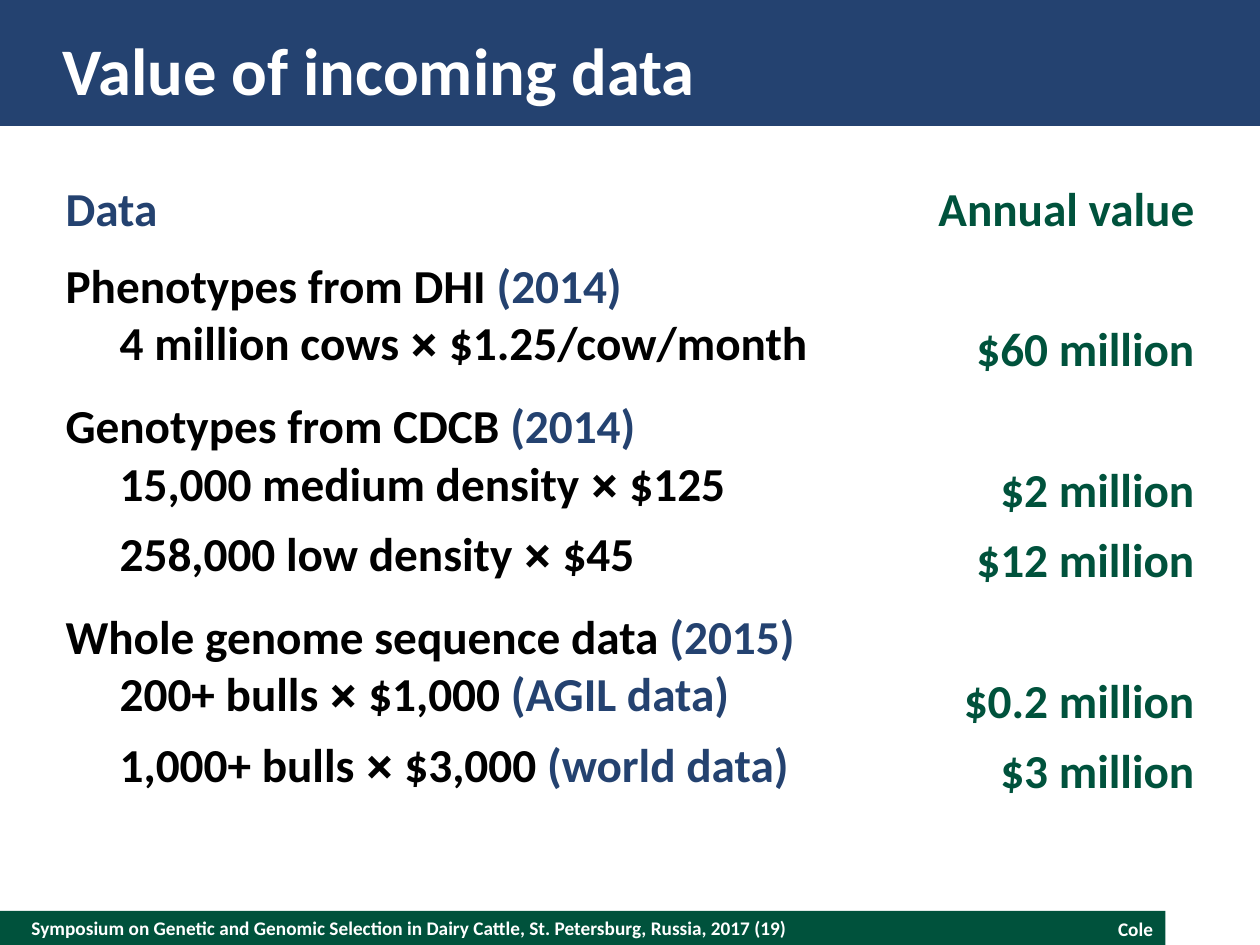
from lxml import etree
from pptx import Presentation
from pptx.dml.color import RGBColor
from pptx.enum.shapes import MSO_SHAPE
from pptx.enum.text import MSO_ANCHOR, PP_ALIGN
from pptx.oxml.ns import qn
from pptx.util import Inches, Pt

RECTANGLE = MSO_SHAPE.RECTANGLE
TOP, MIDDLE, BOTTOM = MSO_ANCHOR.TOP, MSO_ANCHOR.MIDDLE, MSO_ANCHOR.BOTTOM
LEFT, RIGHT = PP_ALIGN.LEFT, PP_ALIGN.RIGHT

COLORS = {"navy": "244270", "green": "00523C", "white": "FFFFFF", "black": "000000"}
FONT, SYMBOL_FONT = "Calibri", "DejaVu Sans Mono"
TITLE_SIZE, TABLE_SIZE, FOOTER_SIZE = 38, 27, 11
DETAIL_INDENT = 0.43
TABLE_HEIGHT = 5.02

# Kind of row, main text, note in navy, annual value
ROWS = [
    ("header", "", "Data", "Annual value"),
    ("group", "Phenotypes from DHI ", "(2014)", ""),
    ("detail", "4 million cows × $1.25/cow/month", "", "$60 million"),
    ("group", "Genotypes from CDCB ", "(2014)", ""),
    ("detail", "15,000 medium density × $125", "", "$2 million"),
    ("detail", "258,000 low density × $45", "", "$12 million"),
    ("group", "Whole genome sequence data ", "(2015)", ""),
    ("detail", "200+ bulls × $1,000", " (AGIL data)", "$0.2 million"),
    ("detail", "1,000+ bulls × $3,000", " (world data)", "$3 million"),
]


def color(name):
    return RGBColor.from_string(COLORS[name])


class Page:
    def __init__(self, deck):
        self.slide = deck.slides.add_slide(deck.slide_layouts[6])

    def bar(self, left, top, width, height, fill):
        shape = self.slide.shapes.add_shape(
            RECTANGLE, Inches(left), Inches(top), Inches(width), Inches(height))
        shape.shadow.inherit = False
        shape.fill.solid()
        shape.fill.fore_color.rgb = color(fill)
        shape.line.fill.background()

    def span(self, para, text, size, ink, font=FONT):
        span = para.add_run()
        span.text = text
        span.font.name = font
        span.font.size = Pt(size)
        span.font.bold = True
        span.font.color.rgb = color(ink)

    def text(self, left, top, width, height, text, size,
             align=LEFT, anchor=MIDDLE, inset=(0, 0)):
        box = self.slide.shapes.add_textbox(
            Inches(left), Inches(top), Inches(width), Inches(height))
        frame = box.text_frame
        frame.word_wrap = True
        frame.vertical_anchor = anchor
        frame.margin_left = frame.margin_right = Inches(inset[0])
        frame.margin_top = frame.margin_bottom = Inches(inset[1])
        para = frame.paragraphs[0]
        para.alignment = align
        self.span(para, text, size, "white")

    def rule(self, cell, side):
        """Draw a white line on one side of a cell."""
        line = etree.Element(qn("a:" + side), w=str(Pt(2.25)))
        fill = etree.SubElement(line, qn("a:solidFill"))
        etree.SubElement(fill, qn("a:srgbClr"), val=COLORS["white"])
        cell._tc.get_or_add_tcPr().insert(0, line)

    def label(self, cell, kind, main, note):
        """Fill the left cell: group names sit low, details hang below them."""
        para = cell.text_frame.paragraphs[0]
        if kind == "group":
            cell.vertical_anchor = BOTTOM
            cell.margin_bottom = 0
        elif kind == "detail":
            cell.margin_top = 0
            # A narrow right margin keeps the longest detail on one line
            cell.margin_right = Inches(0.05)
            para._p.get_or_add_pPr().set("marL", str(Inches(DETAIL_INDENT)))
        before, times, after = main.partition("×")
        for text, ink, font in ((before, "black", FONT), (times, "black", SYMBOL_FONT),
                                (after, "black", FONT), (note, "navy", FONT)):
            if text:
                self.span(para, text, TABLE_SIZE, ink, font)

    def table(self, left, top, widths, height, rows):
        frame = self.slide.shapes.add_table(
            len(rows), len(widths), Inches(left), Inches(top),
            Inches(sum(widths)), Inches(height))
        table = frame.table
        table.first_row = table.horz_banding = False
        for column, width in zip(table.columns, widths):
            column.width = Inches(width)
        for index, (kind, main, note, value) in enumerate(rows):
            table.rows[index].height = Inches(height / len(rows))
            name_cell, value_cell = table.rows[index].cells
            for cell in (name_cell, value_cell):
                cell.fill.background()
                if index < 2:
                    self.rule(cell, ("lnB", "lnT")[index])
            self.label(name_cell, kind, main, note)
            if value:
                para = value_cell.text_frame.paragraphs[0]
                para.alignment = RIGHT
                self.span(para, value, TABLE_SIZE, "green")


def main():
    deck = Presentation()
    deck.slide_width, deck.slide_height = Inches(10), Inches(7.5)
    page = Page(deck)

    # Footer and title bands
    page.bar(0, 7.23, 9.25, 0.27, "green")
    page.bar(0, 0, 10, 1, "navy")
    page.text(0.25, 7.23, 6.5, 0.27,
              "Symposium on Genetic and Genomic Selection in Dairy Cattle, "
              "St. Petersburg, Russia, 2017 (19)", FOOTER_SIZE)
    page.text(7.25, 7.23, 2, 0.29, "Cole", FOOTER_SIZE, RIGHT, TOP, (0.1, 0.05))
    page.text(0.5, 0.2, 9, 0.7, "Value of incoming data", TITLE_SIZE)

    # Data sources and their annual value
    page.table(0.42, 1.39, (6.08, 3.08), TABLE_HEIGHT, ROWS)
    deck.save("out.pptx")


if __name__ == "__main__":
    main()
